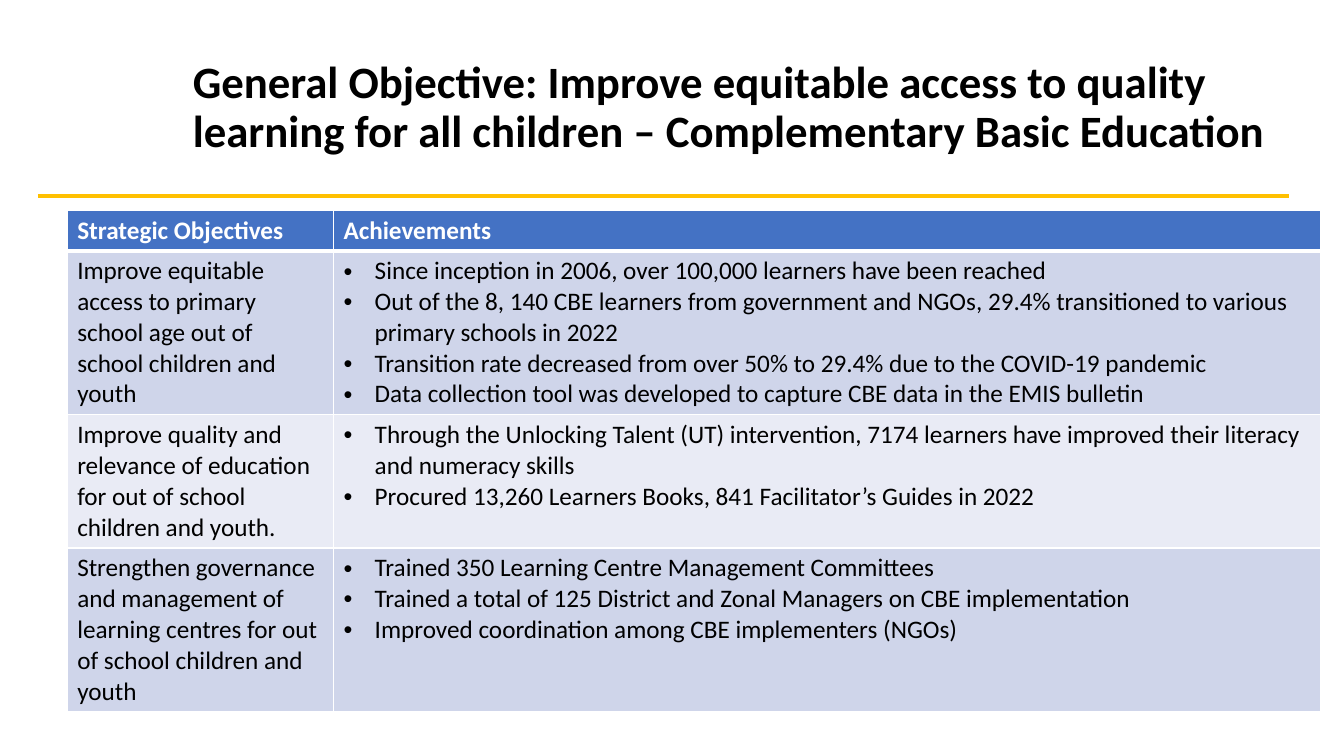
from lxml import etree
from pptx import Presentation
from pptx import util as u
from pptx.dml.color import RGBColor
from pptx.enum import shapes, text
from pptx.oxml.ns import qn

COLUMNS, ROWS = 160, 90
CELL = u.Inches(7.5) / ROWS
BULLET_INDENT = u.Inches(0.31)

HEADINGS = ["Strategic Objectives", "Achievements"]
OBJECTIVES = [
    ("Improve equitable access to primary school age out of school children and youth",
     ["Since inception in 2006, over 100,000 learners have been reached",
      "Out of the 8, 140 CBE learners from government and NGOs, 29.4% transitioned "
      "to various primary schools in 2022",
      "Transition rate decreased from over 50% to 29.4% due to the COVID-19 pandemic",
      "Data collection tool was developed to capture CBE data in the EMIS bulletin"]),
    ("Improve quality and relevance of education for out of school children and youth.",
     ["Through the Unlocking Talent (UT) intervention, 7174 learners have improved "
      "their literacy and numeracy skills",
      "Procured 13,260 Learners Books, 841 Facilitator’s Guides in 2022"]),
    ("Strengthen governance and management of learning centres for out of school "
     "children and youth",
     ["Trained 350 Learning Centre Management Committees",
      "Trained a total of 125 District and Zonal Managers on CBE implementation",
      "Improved coordination among CBE implementers (NGOs)"]),
]
LINES_PER_ROW = [1, 5, 4, 5]


def color(value):
    return RGBColor.from_string(value)


def grid(*cells):
    """Turn counts of grid cells into lengths."""
    return [u.Emu(round(count * CELL)) for count in cells]


class ObjectiveSlide:
    font_name = "Calibri"
    ink, paper, accent = "000000", "FFFFFF", "FFC000"
    header_fill, bands = "4472C4", ["CFD5EA", "E9EBF5"]

    def __init__(self, deck):
        self.slide = deck.slides.add_slide(deck.slide_layouts[5])

    def style(self, paragraph, size, ink, bold=False):
        font = paragraph.font
        font.name, font.size, font.bold = self.font_name, u.Pt(size), bold
        font.color.rgb = color(ink)

    def title(self, wording, *place):
        heading = self.slide.shapes.title
        heading.left, heading.top, heading.width, heading.height = grid(*place)
        frame = heading.text_frame
        frame.text = wording
        frame.word_wrap = True
        frame.auto_size = text.MSO_AUTO_SIZE.NONE
        frame.vertical_anchor = text.MSO_ANCHOR.BOTTOM
        paragraph = frame.paragraphs[0]
        paragraph.alignment = text.PP_ALIGN.LEFT
        paragraph.line_spacing = 0.9
        self.style(paragraph, 32, self.ink, bold=True)

    def rule(self, left, right, top):
        divider = self.slide.shapes.add_connector(
            shapes.MSO_CONNECTOR.STRAIGHT, *grid(left, top, right, top))
        divider.line.color.rgb = color(self.accent)
        divider.line.width = u.Pt(3)
        etree.SubElement(divider.element.spPr, qn("a:effectLst"))

    def borders(self, cell, bottom):
        properties = cell._tc.get_or_add_tcPr()
        for side, width in zip("LRTB", (1, 1, 1, bottom)):
            edge = etree.SubElement(properties, qn(f"a:ln{side}"), w=str(u.Pt(width)))
            fill = etree.SubElement(edge, qn("a:solidFill"))
            etree.SubElement(fill, qn("a:srgbClr"), val=self.paper)

    def bullet(self, paragraph):
        properties = paragraph._p.get_or_add_pPr()
        properties.set("marL", str(BULLET_INDENT))
        properties.set("indent", str(-BULLET_INDENT))
        etree.SubElement(properties, qn("a:buFont"), typeface="Arial")
        etree.SubElement(properties, qn("a:buChar"), char="•")

    def cell(self, cell, wording, fill, header=False):
        """Fill one cell; a list of strings becomes bullets."""
        self.borders(cell, bottom=3 if header else 1)
        cell.fill.solid()
        cell.fill.fore_color.rgb = color(fill)
        bulleted = isinstance(wording, list)
        cell.text = "\n".join(wording) if bulleted else wording
        for paragraph in cell.text_frame.paragraphs:
            if bulleted:
                self.bullet(paragraph)
            self.style(paragraph, 18, self.paper if header else self.ink, header)

    def table(self, left, top, widths):
        heights = [1.2 + 3.6 * lines for lines in LINES_PER_ROW]
        table = self.slide.shapes.add_table(
            len(heights), len(widths),
            *grid(left, top, sum(widths), sum(heights))).table
        for column, width in zip(table.columns, grid(*widths)):
            column.width = width
        for row, height in zip(table.rows, grid(*heights)):
            row.height = height
        for index, entries in enumerate([HEADINGS, *OBJECTIVES]):
            header = index == 0
            fill = self.header_fill if header else self.bands[(index - 1) % 2]
            for cell, wording in zip(table.rows[index].cells, entries):
                self.cell(cell, wording, fill, header)


def main():
    deck = Presentation()
    deck.slide_width, deck.slide_height = grid(COLUMNS, ROWS)
    page = ObjectiveSlide(deck)
    page.rule(4.5, 153.4, 23.3)
    page.title("General Objective: Improve equitable access to quality learning "
               "for all children – Complementary Basic Education",
               21.75, 3.6, 136.4, 15.7)
    page.table(8, 25, [31.7, 117.5])
    deck.save("out.pptx")


if __name__ == "__main__":
    main()
